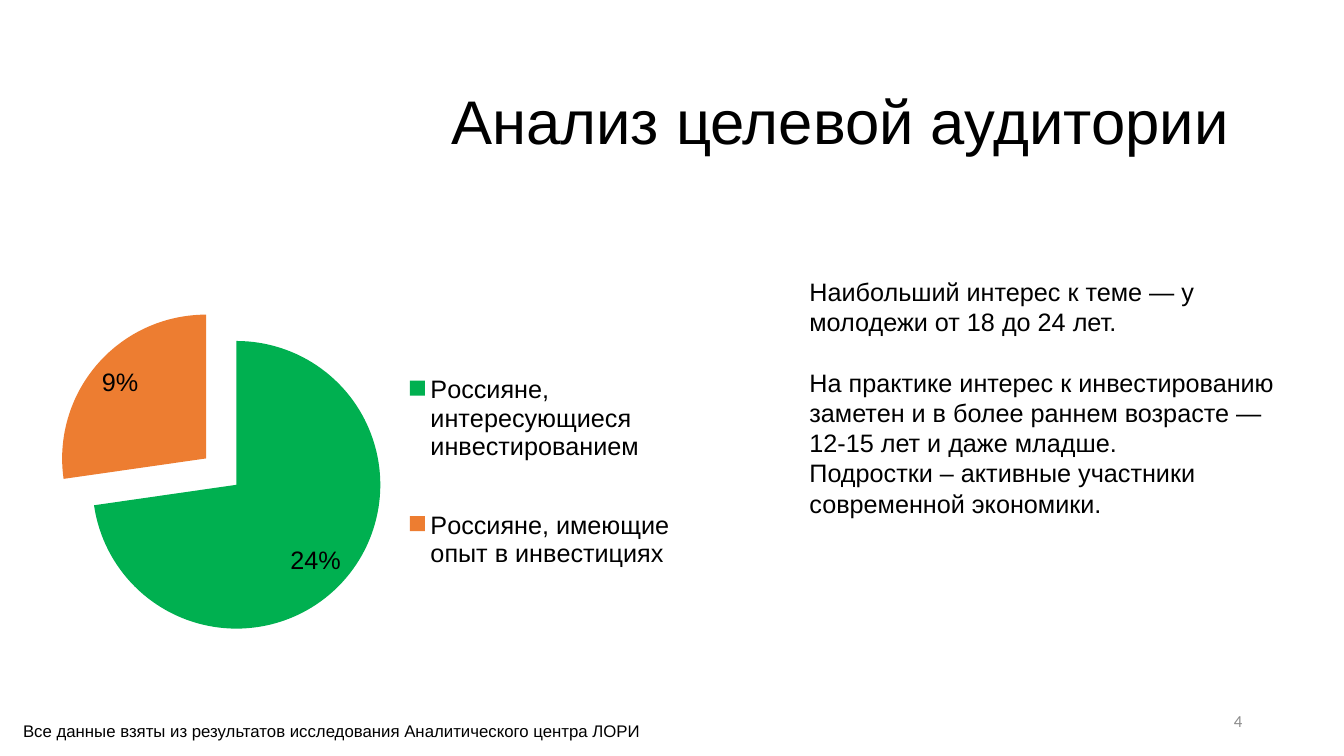
"""Build a slide about the target audience with a pie chart."""
import pptx
import pptx.chart.data
import pptx.dml.color
import pptx.enum.chart
import pptx.enum.text
import pptx.oxml
import pptx.oxml.ns
import pptx.util

WIDTH, HEIGHT = pptx.util.Inches(13.33), pptx.util.Inches(7.5)
BLACK = pptx.dml.color.RGBColor(0x00, 0x00, 0x00)
GRAY = pptx.dml.color.RGBColor(0x8B, 0x8B, 0x8B)
GREEN = pptx.dml.color.RGBColor(0x00, 0xB0, 0x50)
ORANGE = pptx.dml.color.RGBColor(0xED, 0x7D, 0x31)
ALIGN = pptx.enum.text.PP_ALIGN
ANCHOR = pptx.enum.text.MSO_ANCHOR
PIE_AREA = (0.02, 0.23, 0.51, 0.54)
LEGEND_AREA = (0.56, 0.26, 0.42, 0.48)

AUDIENCE = {
    "Россияне, интересующиеся инвестированием": (0.24, GREEN),
    "Россияне, имеющие опыт в инвестициях": (0.09, ORANGE),
}
INTEREST = [
    "Наибольший интерес к теме — у молодежи от 18 до 24 лет.",
    "На практике интерес к инвестированию заметен и в более раннем возрасте ― 12-15 лет и даже младше.",
    "Подростки – активные участники современной экономики.",
]


def area(left, top, width, height):
    """Turn inches into the four lengths of a slide area."""
    return tuple(pptx.util.Inches(value) for value in (left, top, width, height))


def set_font(font, size, name="Arial", color=BLACK):
    """Format a font."""
    font.size = pptx.util.Pt(size)
    font.name = name
    font.color.rgb = color


def write(shape, paragraphs, size, name="Arial", color=BLACK, align=ALIGN.LEFT,
          anchor=ANCHOR.TOP, spacing=1.0, gaps=(), wrap=True):
    """Fill a shape with formatted paragraphs; gaps lists those set apart by a line."""
    frame = shape.text_frame
    frame.word_wrap = wrap
    frame.vertical_anchor = anchor
    for index, text in enumerate(paragraphs):
        paragraph = frame.paragraphs[0] if index == 0 else frame.add_paragraph()
        paragraph.alignment = align
        paragraph.line_spacing = spacing
        paragraph.space_before = pptx.util.Pt(1.2 * size if index in gaps else 0)
        run = paragraph.add_run()
        run.text = text
        set_font(run.font, size, name, color)


def add_text(slide, place, paragraphs, size, **formatting):
    """Add a text box."""
    write(slide.shapes.add_textbox(*place), paragraphs, size, **formatting)


def add_title(slide, place, text):
    """Place and fill the title placeholder."""
    title = slide.shapes.title
    title.left, title.top, title.width, title.height = place
    write(title, [text], 44, align=ALIGN.CENTER, anchor=ANCHOR.MIDDLE, spacing=0.9)


def set_layout(element, shares, target=""):
    """Fix a chart part at left, top, width and height given as shares of the chart."""
    for layout in element.findall(pptx.oxml.ns.qn("c:layout")):
        element.remove(layout)
    sizes = "".join(f'<c:{tag} val="{share}"/>' for tag, share in zip("xywh", shares))
    layout = pptx.oxml.parse_xml(
        f'<c:layout {pptx.oxml.ns.nsdecls("c")}><c:manualLayout>{target}'
        f'<c:xMode val="edge"/><c:yMode val="edge"/>{sizes}</c:manualLayout></c:layout>')
    position = element.find(pptx.oxml.ns.qn("c:legendPos"))
    if position is None:
        element.insert(0, layout)
    else:
        position.addnext(layout)


def add_pie(slide, place, shares, explosion):
    """Add an exploded pie chart with a legend and percentage labels."""
    data = pptx.chart.data.CategoryChartData(number_format="0%")
    data.categories = list(shares)
    data.add_series("Series 1", [value for value, color in shares.values()])
    chart = slide.shapes.add_chart(pptx.enum.chart.XL_CHART_TYPE.PIE, *place, data).chart
    set_font(chart.font, 18)
    chart.has_title = False
    chart.has_legend = True
    chart.legend.position = pptx.enum.chart.XL_LEGEND_POSITION.RIGHT
    chart.legend.include_in_layout = False
    set_font(chart.legend.font, 18)
    set_layout(chart.legend._element, LEGEND_AREA)

    plot = chart.plots[0]
    set_layout(plot._element.getparent(), PIE_AREA, '<c:layoutTarget val="inner"/>')
    plot.vary_by_categories = True
    series = plot.series[0]
    for index, (value, color) in enumerate(shares.values()):
        fill = series.points[index].format.fill
        fill.solid()
        fill.fore_color.rgb = color
    series_name = series._element.find(pptx.oxml.ns.qn("c:tx"))
    series_name.addnext(pptx.oxml.parse_xml(
        f'<c:explosion {pptx.oxml.ns.nsdecls("c")} val="{explosion}"/>'))

    plot.has_data_labels = True
    labels = plot.data_labels
    labels.show_value = True
    labels.show_percentage = False
    labels.number_format = "0%"
    labels.number_format_is_linked = False
    labels.position = pptx.enum.chart.XL_LABEL_POSITION.INSIDE_END
    set_font(labels.font, 18)


def main():
    """Build and save the presentation."""
    presentation = pptx.Presentation()
    presentation.slide_width, presentation.slide_height = WIDTH, HEIGHT
    slide = presentation.slides.add_slide(presentation.slide_layouts.get_by_name("Title Only"))
    add_title(slide, area(3.79, 0.51, 9.09, 1.45), "Анализ целевой аудитории")
    add_pie(slide, area(0.44, 1.65, 6.38, 6.06), AUDIENCE, explosion=14)
    add_text(slide, area(9.42, 6.95, 3, 0.4), ["4"], 12, name="Calibri", color=GRAY,
             align=ALIGN.RIGHT, anchor=ANCHOR.MIDDLE)
    add_text(slide, area(7.93, 2.69, 4.84, 2.52), INTEREST, 18, gaps=(1,))
    add_text(slide, area(0.13, 7.1, 6.39, 0.3),
             ["Все данные взяты из результатов исследования Аналитического центра ЛОРИ"],
             12, wrap=False)
    presentation.save("out.pptx")


if __name__ == "__main__":
    main()
